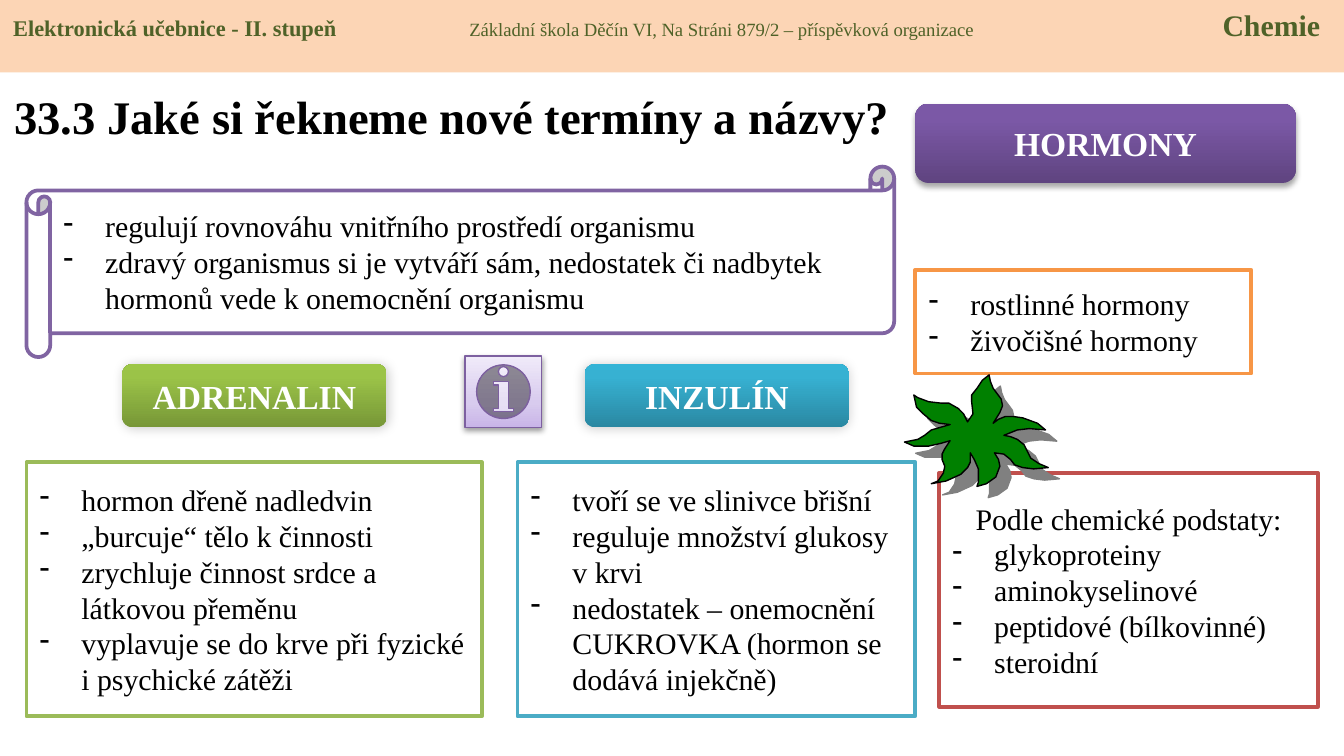
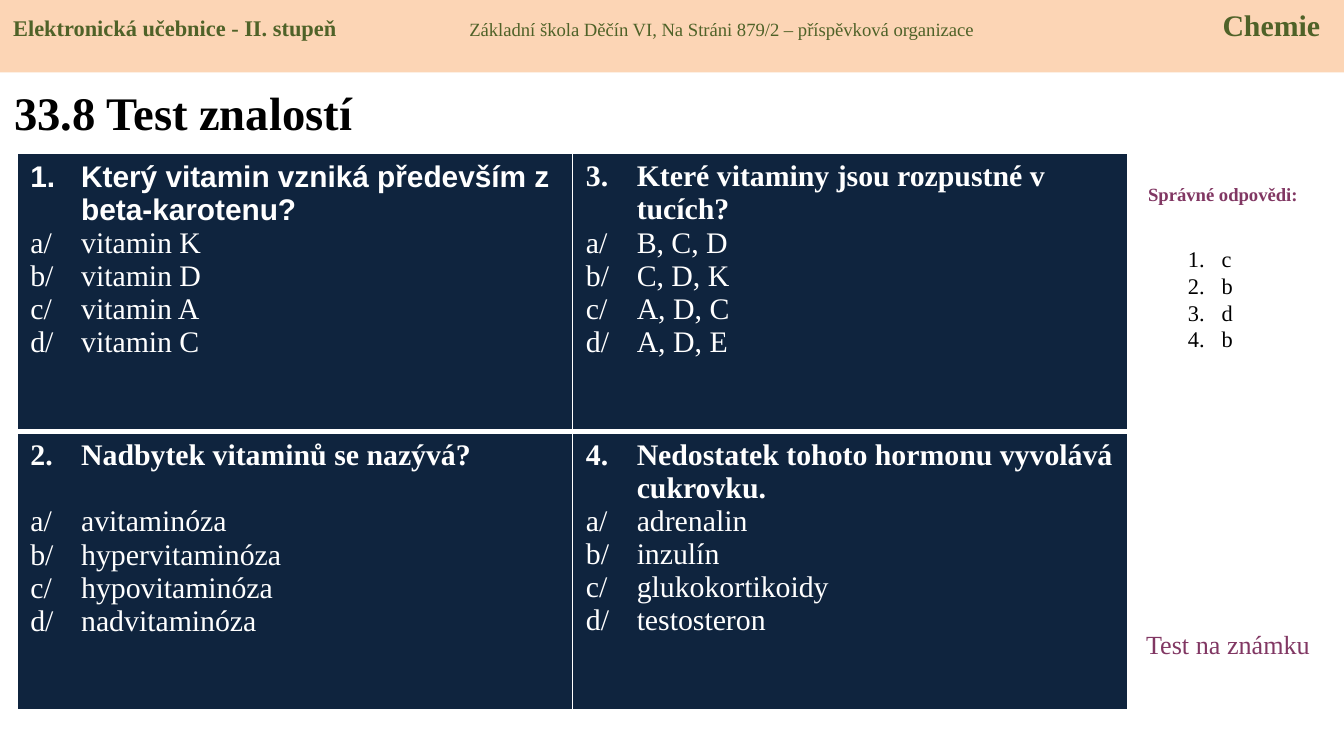
from lxml.etree import SubElement
from pptx import Presentation
from pptx.dml.color import RGBColor
from pptx.enum.shapes import MSO_SHAPE
from pptx.enum.text import MSO_ANCHOR, PP_ALIGN
from pptx.oxml.ns import qn
from pptx.util import Cm, Pt

HUES = {
    "band": "FCD5B5", "moss": "4F6228", "black": "000000", "white": "FFFFFF",
    "plum": "813763", "navy": "0F243E", "violet": "8064A2", "teal": "4BACC6",
    "lime": "9BBB59", "orange": "F79646", "red": "C0504D", "leaf": "008000",
    "grey": "808080", "edge": "7D60A0",
}
# Gradient stops as (percent, colour), from bottom to top
FADES = {
    "violet": [(0, "5F4480"), (80, "7B58A6"), (100, "7C57A8")],
    "teal": [(0, "2A88A2"), (80, "37B1D2"), (100, "34B4D6")],
    "lime": [(0, "779737"), (80, "9BC348"), (100, "9DC746")],
    "pale": [(0, "C9B5E8"), (35, "D8CBEE"), (100, "F0EAF9")],
}
BODY = {"name": "Times New Roman", "size": Pt(16), "bold": False}
HEAD = BODY | {"size": Pt(25), "bold": True}
LABEL = BODY | {"size": Pt(18), "bold": True}
HANG = Cm(0.79)

# Leaf outline, in hundredths of an inch
LEAF = [
    (720, 314), (717, 308), (713, 304), (706, 300), (700, 300), (691, 299),
    (683, 296), (680, 294), (682, 303), (687, 308), (693, 313), (699, 315),
    (707, 316), (693, 320), (688, 324), (683, 327), (673, 329), (680, 332),
    (691, 332), (700, 330), (707, 328), (703, 334), (701, 338), (701, 342),
    (703, 347), (702, 352), (698, 358), (693, 360), (704, 358), (715, 353),
    (720, 348), (722, 344), (722, 337), (725, 342), (728, 349), (728, 359),
    (727, 362), (734, 360), (741, 355), (744, 347), (743, 342), (740, 337),
    (747, 338), (752, 342), (755, 346), (761, 348), (769, 349), (780, 348),
    (773, 345), (767, 341), (765, 337), (762, 331), (757, 327), (752, 325),
    (747, 324), (757, 320), (766, 319), (778, 320), (772, 315), (761, 311),
    (754, 310), (748, 310), (743, 312), (739, 315), (744, 307), (746, 302),
    (745, 297), (739, 289), (737, 284), (736, 279), (731, 283), (727, 289),
    (723, 294), (723, 299), (724, 308), (720, 314),
]

CELLS = [
    [("Který vitamin vzniká především z beta-karotenu?",
      ["vitamin K", "vitamin D", "vitamin A", "vitamin C"]),
     ("Které vitaminy jsou rozpustné v tucích?",
      ["B, C, D", "C, D, K", "A, D, C", "A, D, E"])],
    [("Nadbytek vitaminů se nazývá?",
      ["avitaminóza", "hypervitaminóza", "hypovitaminóza", "nadvitaminóza"]),
     ("Nedostatek tohoto hormonu vyvolává cukrovku.",
      ["adrenalin", "inzulín", "glukokortikoidy", "testosteron"])],
]


def tone(hue):
    return RGBColor.from_string(HUES[hue])


def write(para, text, form=BODY, hue="black"):
    run = para.add_run()
    run.text = text
    for key, value in form.items():
        setattr(run.font, key, value)
    run.font.color.rgb = tone(hue)


def hang(para, width, mark=None, start=None):
    """Hanging indent, with a bullet character or a number if one is given."""
    props = para._p.get_or_add_pPr()
    props.set("marL", str(width))
    props.set("indent", str(-width))
    if start:
        SubElement(props, qn("a:buAutoNum"), type="arabicPeriod", startAt=str(start))
    elif mark:
        SubElement(props, qn("a:buChar"), char=mark)
    else:
        SubElement(props, qn("a:buNone"))


def paras(frame):
    """Yield the first paragraph of a frame, then new ones."""
    yield frame.paragraphs[0]
    while True:
        yield frame.add_paragraph()


def shade(shape, hue, alpha, blur, dist, angle):
    shape.shadow.inherit = False
    effects = shape._element.spPr.find(qn("a:effectLst"))
    outer = SubElement(effects, qn("a:outerShdw"), blurRad=str(Pt(blur)),
                       dist=str(Pt(dist)), dir=str(angle * 60000),
                       algn="ctr", rotWithShape="0")
    color = SubElement(outer, qn("a:srgbClr"), val=HUES[hue])
    SubElement(color, qn("a:alpha"), val=str(alpha * 1000))


def fade(shape, stops):
    shape.fill.gradient()
    shape.fill.gradient_angle = 90
    group = shape._element.spPr.find(qn("a:gradFill")).find(qn("a:gsLst"))
    for stop in list(group):
        group.remove(stop)
    for place, color in stops:
        stop = SubElement(group, qn("a:gs"), pos=str(place * 1000))
        SubElement(stop, qn("a:srgbClr"), val=color)


def form(slide, kind, place, fill=None, line=None, width=2):
    shape = slide.shapes.add_shape(kind, *map(Cm, place))
    shape.shadow.inherit = False
    paint(shape, fill, line, width)
    shape.text_frame.word_wrap = True
    return shape


def paint(shape, fill, line, width):
    if fill:
        shape.fill.solid()
        shape.fill.fore_color.rgb = tone(fill)
    else:
        shape.fill.background()
    if line:
        shape.line.color.rgb = tone(line)
        shape.line.width = Pt(width)
    else:
        shape.line.fill.background()


def note(slide, place, text, look=BODY, hue="black", align=PP_ALIGN.LEFT,
         anchor=MSO_ANCHOR.TOP):
    frame = slide.shapes.add_textbox(*map(Cm, place)).text_frame
    frame.word_wrap = True
    frame.vertical_anchor = anchor
    frame.paragraphs[0].alignment = align
    write(frame.paragraphs[0], text, look, hue)


def band(slide):
    shape = form(slide, MSO_SHAPE.RECTANGLE, (0, 0, 25.4, 1.37), "band")
    shape.text_frame.vertical_anchor = MSO_ANCHOR.TOP
    para = shape.text_frame.paragraphs[0]
    para.alignment = PP_ALIGN.LEFT
    tabs = SubElement(para._p.get_or_add_pPr(), qn("a:tabLst"))
    for stop, side in ((8.62, "l"), (24.7, "r")):
        SubElement(tabs, qn("a:tab"), pos=str(Cm(stop)), algn=side)
    for text, size, bold in (
        ("Elektronická učebnice - II. stupeň\t", 12, True),
        ("Základní škola Děčín VI, Na Stráni 879/2 – příspěvková organizace\t", 10, False),
        ("Chemie", 16, True),
    ):
        write(para, text, BODY | {"size": Pt(size), "bold": bold}, "moss")


def title(slide, text, width, height):
    note(slide, (0.02, 1.37, width, height), text, HEAD, anchor=MSO_ANCHOR.MIDDLE)


def panel(slide, place, hue, items, lead=None, fill="white", kind=MSO_SHAPE.RECTANGLE):
    """Outlined box with dashed items below an optional centred lead line."""
    frame = form(slide, kind, place, fill, hue).text_frame
    frame.vertical_anchor = MSO_ANCHOR.MIDDLE
    lines = paras(frame)
    if lead:
        para = next(lines)
        para.alignment = PP_ALIGN.CENTER
        write(para, lead)
    for item, para in zip(items, lines):
        para.alignment = PP_ALIGN.LEFT
        hang(para, HANG, "-")
        write(para, item)


def label(slide, place, text, hue, shadow):
    shape = form(slide, MSO_SHAPE.ROUNDED_RECTANGLE, place)
    fade(shape, FADES[hue])
    shade(shape, "black", *shadow)
    shape.text_frame.vertical_anchor = MSO_ANCHOR.MIDDLE
    para = shape.text_frame.paragraphs[0]
    para.alignment = PP_ALIGN.CENTER
    write(para, text, LABEL, "white")


def leaf(slide):
    pen = slide.shapes.build_freeform(*LEAF[0], scale=Cm(2.54) / 100)
    pen.add_line_segments(LEAF[1:], close=True)
    shape = pen.convert_to_shape()
    paint(shape, "leaf", "black", 0.75)
    shade(shape, "grey", 100, 0, 8.5, 45)


def rim(cell, base):
    """White cell borders; base is the width of the bottom one."""
    props = cell._tc.get_or_add_tcPr()
    for spot, (side, width) in enumerate(zip("LRTB", (1, 1, 1, base))):
        line = SubElement(props, qn(f"a:ln{side}"), w=str(Pt(width)))
        fill = SubElement(line, qn("a:solidFill"))
        SubElement(fill, qn("a:srgbClr"), val=HUES["white"])
        props.insert(spot, line)


def quiz(slide):
    grid = slide.shapes.add_table(2, 2, *map(Cm, (0.32, 2.9, 21, 10.52))).table
    grid.first_row = grid.horz_banding = False
    for row, line in enumerate(CELLS):
        for col, (ask, picks) in enumerate(line):
            cell = grid.cell(row, col)
            cell.fill.solid()
            cell.fill.fore_color.rgb = tone("navy")
            rim(cell, 1 if row else 3)
            number = col * 2 + row + 1
            lines = paras(cell.text_frame)
            para = next(lines)
            hang(para, Cm(0.96), start=number)
            face = "Arial" if number == 1 else BODY["name"]
            write(para, ask, BODY | {"name": face, "bold": True}, "white")
            for mark, pick, para in zip("abcd", picks, lines):
                hang(para, Cm(0.96))
                if number == 2 and mark == "a":
                    para.space_before = Pt(18)
                write(para, f"{mark}/\t{pick}", hue="white")


def terms(slide):
    title(slide, "33.3 Jaké si řekneme nové termíny a názvy?", 20.6, 1.65)
    band(slide)
    label(slide, (17.3, 1.96, 7.19, 1.5), "HORMONY", "violet", (35, 3.1, 1.8, 90))
    panel(slide, (0.5, 3.15, 16.4, 3.6), "violet", [
        "regulují rovnováhu vnitřního prostředí organismu",
        "zdravý organismus si je vytváří sám, nedostatek či nadbytek hormonů "
        "vede k onemocnění organismu"], kind=MSO_SHAPE.HORIZONTAL_SCROLL)
    panel(slide, (9.78, 8.74, 7.52, 4.8), "teal", [
        "tvoří se ve slinivce břišní", "reguluje množství glukosy v krvi",
        "nedostatek – onemocnění CUKROVKA (hormon se dodává injekčně)"])
    label(slide, (11.05, 6.88, 5, 1.2), "INZULÍN", "teal", (20, 6, 1, 135))
    label(slide, (2.31, 6.88, 5, 1.2), "ADRENALIN", "lime", (20, 6, 1, 45))
    panel(slide, (0.5, 8.74, 8.61, 4.8), "lime", [
        "hormon dřeně nadledvin", "„burcuje“ tělo k činnosti",
        "zrychluje činnost srdce a látkovou přeměnu",
        "vyplavuje se do krve při fyzické i psychické zátěži"])
    panel(slide, (17.3, 5.1, 6.35, 1.96), "orange",
          ["rostlinné hormony", "živočišné hormony"], fill=None)
    panel(slide, (17.75, 8.94, 7.16, 4.42), "red",
          ["glykoproteiny", "aminokyselinové", "peptidové (bílkovinné)", "steroidní"],
          "Podle chemické podstaty:")
    leaf(slide)
    info = form(slide, MSO_SHAPE.ACTION_BUTTON_INFORMATION, (8.79, 6.73, 1.45, 1.35),
                line="edge", width=0.75)
    fade(info, FADES["pale"])
    shade(info, "black", 38, 3.1, 1.6, 90)


def test(slide):
    title(slide, "33.8 Test znalostí", 8.13, 1.5)
    note(slide, (21.31, 3.33, 3.6, 0.69), "Správné odpovědi:",
         BODY | {"size": Pt(10), "bold": True}, "plum", PP_ALIGN.CENTER)
    quiz(slide)
    frame = slide.shapes.add_textbox(*map(Cm, (22.2, 3.99, 1.4, 3.33))).text_frame
    frame.word_wrap = True
    frame.margin_top = Cm(0.64)
    for key, para in zip("cbdb", paras(frame)):
        hang(para, Cm(0.64), start=1)
        write(para, key, BODY | {"size": Pt(12)})
    note(slide, (21.41, 11.76, 3.99, 0.86), "Test na známku",
         BODY | {"size": Pt(14)}, "plum")
    band(slide)


def main():
    deck = Presentation()
    deck.slide_width, deck.slide_height = Cm(25.4), Cm(14.29)
    for fill in (terms, test):
        fill(deck.slides.add_slide(deck.slide_layouts[6]))
    deck.save("out.pptx")


if __name__ == "__main__":
    main()
